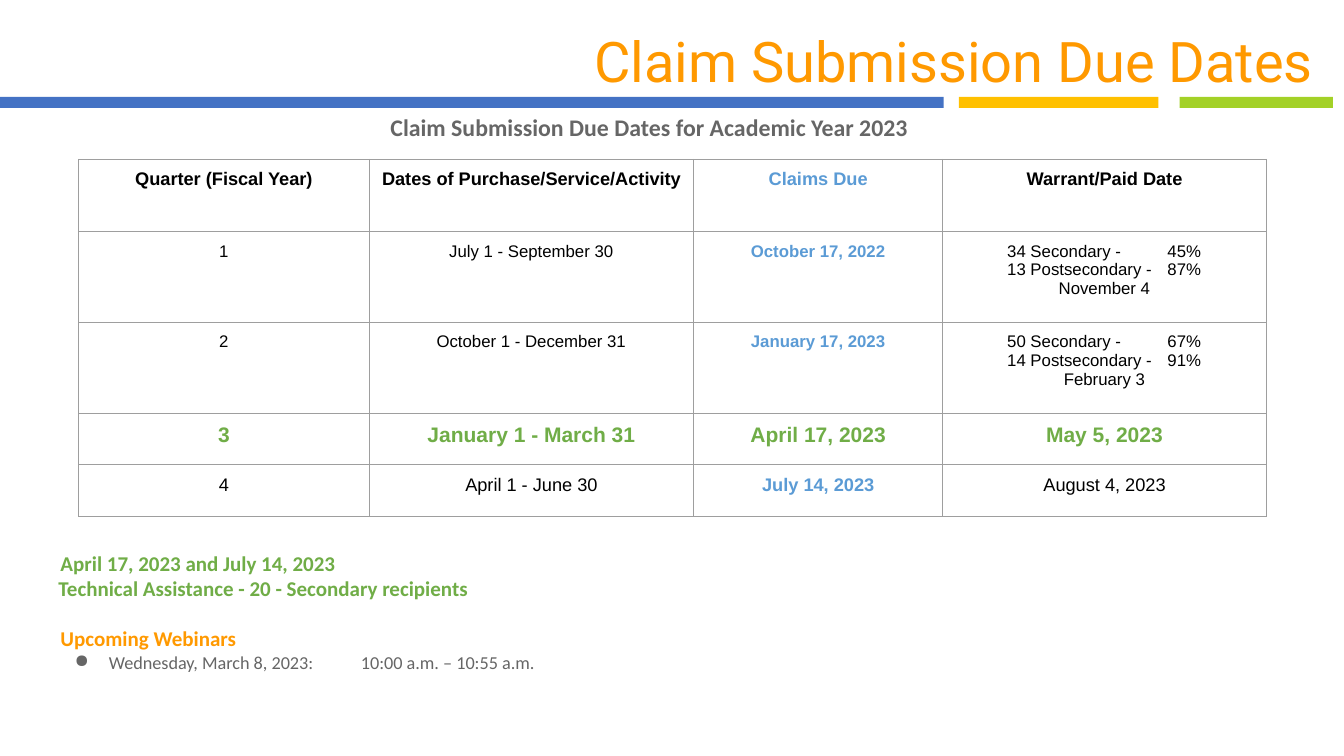
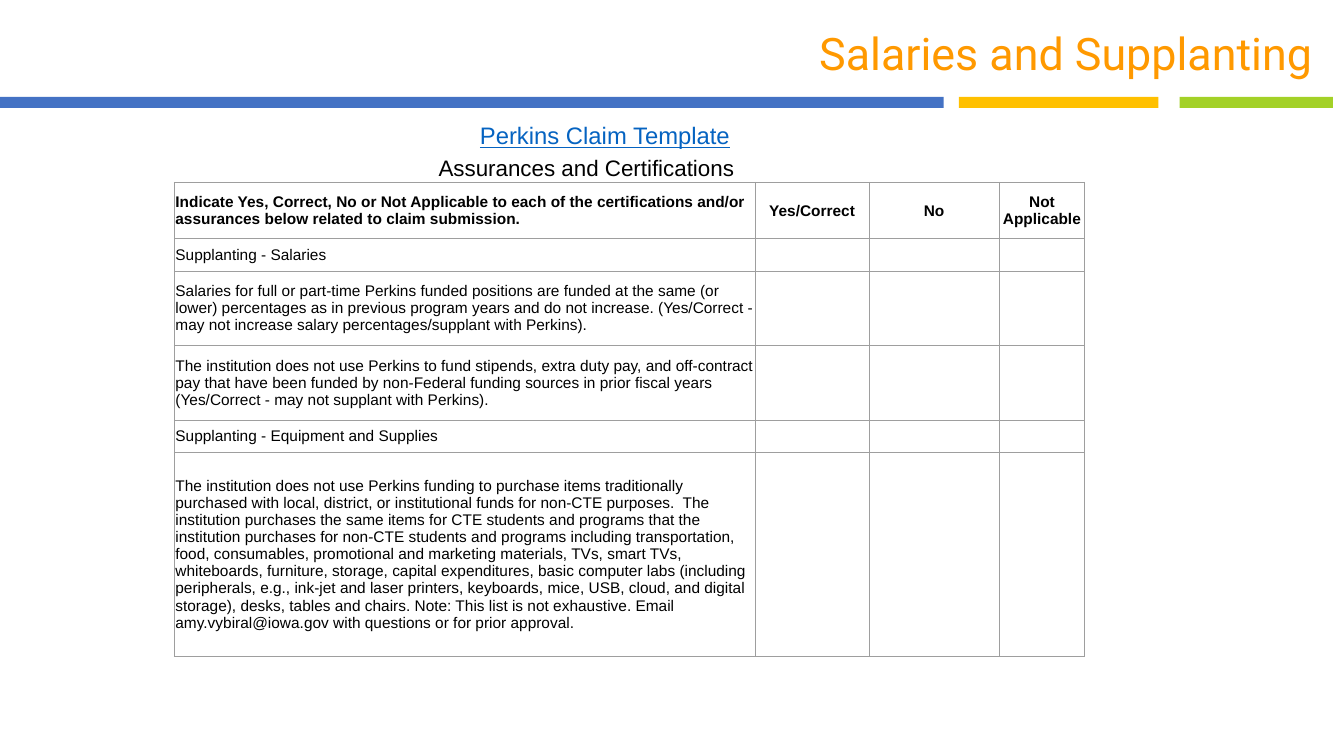
from lxml import etree
from pptx import Presentation
from pptx import util as u
from pptx.dml import color
from pptx.enum import shapes, text
from pptx.oxml import ns

PX = 9144
BLACK, GREY, RULE = "000000", "666666", "9E9E9E"
ORANGE, GREEN, SKY, LINK = "FF9900", "70AD47", "5B9BD5", "0563C1"
BANDS = [(-2, 938, "4472C4"), (951, 198, "FFC000"), (1170, 152, "A3D127")]
LEFT, CENTER, RIGHT = text.PP_ALIGN.LEFT, text.PP_ALIGN.CENTER, text.PP_ALIGN.RIGHT


def px(n):
    """Turn px into EMU."""
    return u.Emu(n * PX)


def rgb(value):
    """Turn a hex string into a colour."""
    return color.RGBColor.from_string(value)


def sub(parent, tag, **attrs):
    """Append a DrawingML element."""
    return etree.SubElement(parent, ns.qn(tag), {k: str(v) for k, v in attrs.items()})


def write(p, words, size, font, ink, bold=False, align=LEFT):
    """Add one styled run to a paragraph."""
    p.alignment = align
    r = p.add_run()
    r.text = words
    r.font.size, r.font.name, r.font.bold = u.Pt(size), font, bold
    r.font.color.rgb = rgb(ink)
    return r


def indent(p, left, first=0):
    """Set the left and first-line indents of a paragraph."""
    pPr = p._p.get_or_add_pPr()
    pPr.set("marL", str(px(left)))
    pPr.set("indent", str(px(first)))
    return pPr


def text_box(s, x, y, w, h, inset=0):
    """Add a wrapping text box and return its frame."""
    tf = s.shapes.add_textbox(px(x), px(y), px(w), px(h)).text_frame
    tf.word_wrap = True
    tf.margin_left = tf.margin_right = tf.margin_top = tf.margin_bottom = px(inset)
    return tf


def new_slide(prs, title, size):
    """Add a blank slide with the three bands and the title."""
    s = prs.slides.add_slide(prs.slide_layouts[6])
    for x, w, fill in BANDS:
        sp = s.shapes.add_shape(shapes.MSO_SHAPE.RECTANGLE, px(x), px(96), px(w), px(11))
        sp.shadow.inherit = False
        sp.fill.solid()
        sp.fill.fore_color.rgb = rgb(fill)
        sp.line.fill.background()
    tf = text_box(s, 257, 13, 1058, 83, 13)
    write(tf.paragraphs[0], title, size, "Roboto", ORANGE, align=RIGHT)
    return s


def add_grid(s, x, y, cols, rows, inset):
    """Add an unfilled table with thin grey rules."""
    frame = s.shapes.add_table(len(rows), len(cols), px(x), px(y), px(sum(cols)), px(sum(rows)))
    table = frame.table
    table.first_row = table.horz_banding = False
    for col, w in zip(table.columns, cols):
        col.width = px(w)
    for row, h in zip(table.rows, rows):
        row.height = px(h)
    for cell in table.iter_cells():
        cell.margin_left = cell.margin_right = cell.margin_top = cell.margin_bottom = px(inset)
        cell.fill.background()
        tcPr = cell._tc.get_or_add_tcPr()
        for i, side in enumerate("LRTB"):
            ln = sub(tcPr, f"a:ln{side}", w=u.Pt(0.75))
            sub(sub(ln, "a:solidFill"), "a:srgbClr", val=RULE)
            tcPr.insert(i, ln)
    return table


def payment_lines(cell, counts, paid):
    """Write tabbed recipient counts above a centred payment date."""
    tf = cell.text_frame
    for i, (label, share) in enumerate(counts):
        p = tf.paragraphs[0] if i == 0 else tf.add_paragraph()
        write(p, f"\t{label} -\t{share}", 12, "Arial", BLACK)
        tabs = sub(p._p.get_or_add_pPr(), "a:tabLst")
        for pos in (54, 213):
            sub(tabs, "a:tab", pos=px(pos), algn="l")
    write(tf.add_paragraph(), paid, 12, "Arial", BLACK, align=CENTER)


def due_dates_table(s, x, y):
    """Add the table of quarters, claim dates and payment dates."""
    rows = [
        (13, ["Quarter (Fiscal Year)", "Dates of Purchase/Service/Activity", "Claims Due", "Warrant/Paid Date"]),
        (12, ["1", "July 1 - September 30", "October 17, 2022"]),
        (12, ["2", "October 1 - December 31", "January 17, 2023"]),
        (15, ["3", "January 1 - March 31", "April 17, 2023", "May 5, 2023"]),
        (13, ["4", "April 1 - June 30", "July 14, 2023", "August 4, 2023"]),
    ]
    table = add_grid(s, x, y, [288, 322, 247, 321], [72, 90, 90, 51, 51], 10)
    for i, (size, words) in enumerate(rows):
        for j, word in enumerate(words):
            ink = GREEN if i == 3 else SKY if j == 2 else BLACK
            p = table.cell(i, j).text_frame.paragraphs[0]
            write(p, word, size, "Arial", ink, i in (0, 3) or j == 2, CENTER)
    payment_lines(table.cell(1, 3), [("34 Secondary", "45%"), ("13 Postsecondary", "87%")], "November 4")
    payment_lines(table.cell(2, 3), [("50 Secondary", "67%"), ("14 Postsecondary", "91%")], "February 3")


def webinar_notes(s, x, y):
    """Add the assistance lines and the webinar list."""
    tf = text_box(s, x, y, 1216, 140)
    lines = [("April 17, 2023 and July 14, 2023", GREEN, 2, 0),
             ("Technical Assistance - 20 - Secondary recipients", GREEN, 0, 0),
             ("Upcoming Webinars", ORANGE, 2, 18)]
    for i, (words, ink, left, before) in enumerate(lines):
        p = tf.paragraphs[0] if i == 0 else tf.add_paragraph()
        p.space_before = u.Pt(before)
        indent(p, left)
        write(p, words, 15, "Calibri", ink, True)
    p = tf.add_paragraph()
    write(p, "Wednesday, March 8, 2023:\t10:00 a.m. – 10:55 a.m.", 13, "Calibri", GREY)
    pPr = indent(p, 50, -34)
    sub(sub(pPr, "a:buClr"), "a:srgbClr", val=GREY)
    sub(pPr, "a:buChar", char="●")


def due_dates_slide(prs):
    """Build the slide of claim due dates."""
    s = new_slide(prs, "Claim Submission Due Dates", 40)
    p = text_box(s, 244, 112, 800, 30).paragraphs[0]
    write(p, "Claim Submission Due Dates for Academic Year 2023", 17, "Calibri", GREY, True, CENTER)
    due_dates_table(s, 78, 158)
    webinar_notes(s, 58, 546)


def assurances_heading(s, x, y):
    """Add the template name and the table caption."""
    tf = text_box(s, x, y, 541, 102, 13)
    p = tf.paragraphs[0]
    p.line_spacing = 1.5
    indent(p, 67)
    write(p, "Perkins Claim Template", 17, "Arial", LINK).font.underline = True
    p = tf.add_paragraph()
    p.space_before = u.Pt(3)
    indent(p, 26)
    write(p, "Assurances and Certifications", 16, "Arial", BLACK)


def assurances_table(s, x, y):
    """Add the checklist of certifications."""
    heads = ["Indicate Yes, Correct, No or Not Applicable to each of the certifications "
             "and/or assurances below related to claim submission.",
             "Yes/Correct", "No", "Not Applicable"]
    items = [
        "Supplanting - Salaries",
        "Salaries for full or part-time Perkins funded positions are funded at the same (or lower) "
        "percentages as in previous program years and do not increase. (Yes/Correct - may not "
        "increase salary percentages/supplant with Perkins).",
        "The institution does not use Perkins to fund stipends, extra duty pay, and off-contract pay "
        "that have been funded by non-Federal funding sources in prior fiscal years (Yes/Correct - "
        "may not supplant with Perkins).",
        "Supplanting - Equipment and Supplies",
        "The institution does not use Perkins funding to purchase items traditionally purchased with "
        "local, district, or institutional funds for non-CTE purposes.  The institution purchases "
        "the same items for CTE students and programs that the institution purchases for non-CTE "
        "students and programs including transportation, food, consumables, promotional and marketing "
        "materials, TVs, smart TVs, whiteboards, furniture, storage, capital expenditures, basic "
        "computer labs (including peripherals, e.g., ink-jet and laser printers, keyboards, mice, USB, "
        "cloud, and digital storage), desks, tables and chairs. Note: This list is not exhaustive. "
        "Email amy.vybiral@iowa.gov with questions or for prior approval.",
    ]
    table = add_grid(s, x, y, [576, 113, 129, 85], [56, 31, 74, 74, 31, 202], 1)
    for cell in table.iter_cells():
        cell.vertical_anchor = text.MSO_ANCHOR.MIDDLE
    for j, head in enumerate(heads):
        p = table.cell(0, j).text_frame.paragraphs[0]
        write(p, head, 11, "Arial", BLACK, True, CENTER if j else LEFT)
    for i, item in enumerate(items, 1):
        write(table.cell(i, 0).text_frame.paragraphs[0], item, 11, "Arial", BLACK)


def supplanting_slide(prs):
    """Build the slide of salary and supplanting assurances."""
    s = new_slide(prs, "Salaries and Supplanting", 32)
    assurances_heading(s, 396, 93)
    assurances_table(s, 173, 181)


def main():
    """Build and save the deck."""
    prs = Presentation()
    prs.slide_width, prs.slide_height = px(1333), px(750)
    due_dates_slide(prs)
    supplanting_slide(prs)
    prs.save("out.pptx")


if __name__ == "__main__":
    main()
